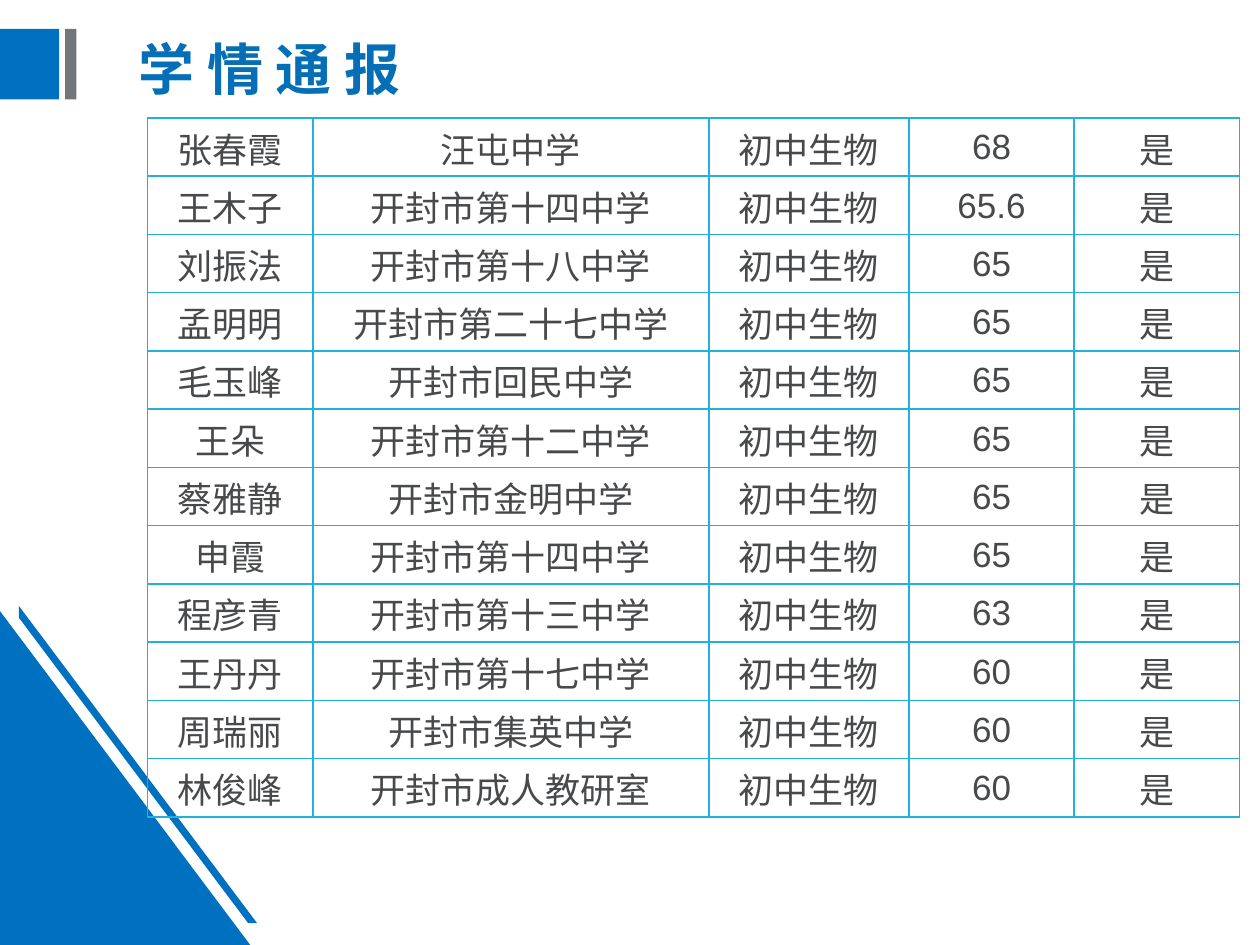
import pptx
import pptx.util
import pptx.dml.color
import pptx.enum.shapes
import pptx.enum.text
import pptx.oxml.ns
import lxml.etree

Pt = pptx.util.Pt
RGB = pptx.dml.color.RGBColor.from_string
SHAPE = pptx.enum.shapes.MSO_SHAPE
MIDDLE = pptx.enum.text.MSO_ANCHOR.MIDDLE
CENTER = pptx.enum.text.PP_ALIGN.CENTER
qn = pptx.oxml.ns.qn

THEME = {
    "blue": "0070C0",
    "gray": "73767A",
    "border": "22B1DE",
    "border_width": Pt(1),
    "chinese": "Noto Sans CJK SC",
    "title": {"name": "Noto Sans CJK SC", "size": Pt(32), "bold": True, "color": "046FB6"},
    "body": {"name": "Arial", "size": Pt(20), "bold": False, "color": "47494B"},
}


def write(para, text, style):
    """Add one run in a theme style, with the Chinese font for its Chinese characters."""
    span = para.add_run()
    span.text = text
    for key, value in style.items():
        if key == "color":
            span.font.color.rgb = RGB(value)
        else:
            setattr(span.font, key, value)
    east_asian = lxml.etree.SubElement(span.font._element, qn("a:ea"))
    east_asian.set("typeface", THEME["chinese"])


def paint(shape, color):
    shape.shadow.inherit = False
    shape.fill.solid()
    shape.fill.fore_color.rgb = RGB(THEME[color])
    shape.line.fill.background()


deck = pptx.Presentation()
deck.slide_width, deck.slide_height = Pt(720), Pt(540)
slide = deck.slides.add_slide(deck.slide_layouts[6])

# Title markers and corner triangle
for kind, left, top, width, height, color in [
    (SHAPE.RECTANGLE, 0, 16.5, 33.8, 40.3, "blue"),
    (SHAPE.RECTANGLE, 37.2, 16.5, 6.5, 40.3, "gray"),
    (SHAPE.RIGHT_TRIANGLE, 0, 349.2, 143, 190.8, "blue"),
]:
    paint(slide.shapes.add_shape(kind, Pt(left), Pt(top), Pt(width), Pt(height)), color)

# Stripe along the triangle
stripe_points = [(10.8, 346.3), (146.9, 527.5), (141.8, 527.5), (10.8, 353)]
corners = [(Pt(x), Pt(y)) for x, y in stripe_points]
builder = slide.shapes.build_freeform(*corners[0])
builder.add_line_segments(corners[1:], close=True)
paint(builder.convert_to_shape(), "blue")

# Results table
SUBJECT, PASSED = "初中生物", "是"
results = [
    ("张春霞", "汪屯中学", "68"),
    ("王木子", "开封市第十四中学", "65.6"),
    ("刘振法", "开封市第十八中学", "65"),
    ("孟明明", "开封市第二十七中学", "65"),
    ("毛玉峰", "开封市回民中学", "65"),
    ("王朵", "开封市第十二中学", "65"),
    ("蔡雅静", "开封市金明中学", "65"),
    ("申霞", "开封市第十四中学", "65"),
    ("程彦青", "开封市第十三中学", "63"),
    ("王丹丹", "开封市第十七中学", "60"),
    ("周瑞丽", "开封市集英中学", "60"),
    ("林俊峰", "开封市成人教研室", "60"),
]
column_widths = [94.5, 226.3, 114.3, 94.5, 94.5]
row_height = 33.28
cell_format = {
    "vertical_anchor": MIDDLE,
    "margin_left": Pt(0.7),
    "margin_right": Pt(0.7),
    "margin_top": Pt(0.7),
    "margin_bottom": 0,
}
table = slide.shapes.add_table(
    len(results), len(column_widths), Pt(84.3), Pt(67.4),
    Pt(sum(column_widths)), Pt(row_height * len(results)),
).table
table.first_row = table.horz_banding = False
for column, width in zip(table.columns, column_widths):
    column.width = Pt(width)

for row, (teacher, school, score) in zip(table.rows, results):
    row.height = Pt(row_height)
    for cell, text in zip(row.cells, (teacher, school, SUBJECT, score, PASSED)):
        for key, value in cell_format.items():
            setattr(cell, key, value)
        properties = cell._tc.get_or_add_tcPr()
        for side in ("a:lnL", "a:lnR", "a:lnT", "a:lnB"):
            line = lxml.etree.SubElement(properties, qn(side), w=str(THEME["border_width"]))
            fill = lxml.etree.SubElement(line, qn("a:solidFill"))
            lxml.etree.SubElement(fill, qn("a:srgbClr"), val=THEME["border"])
        cell.fill.background()
        para = cell.text_frame.paragraphs[0]
        para.alignment = CENTER
        write(para, text, THEME["body"])

# Title
box = slide.shapes.add_textbox(Pt(72), Pt(10), Pt(322), Pt(62.6))
box.text_frame.word_wrap = True
box.text_frame.vertical_anchor = MIDDLE
para = box.text_frame.paragraphs[0]
para.line_spacing = 0.9
write(para, "学 情 通 报", THEME["title"])

deck.save("out.pptx")
